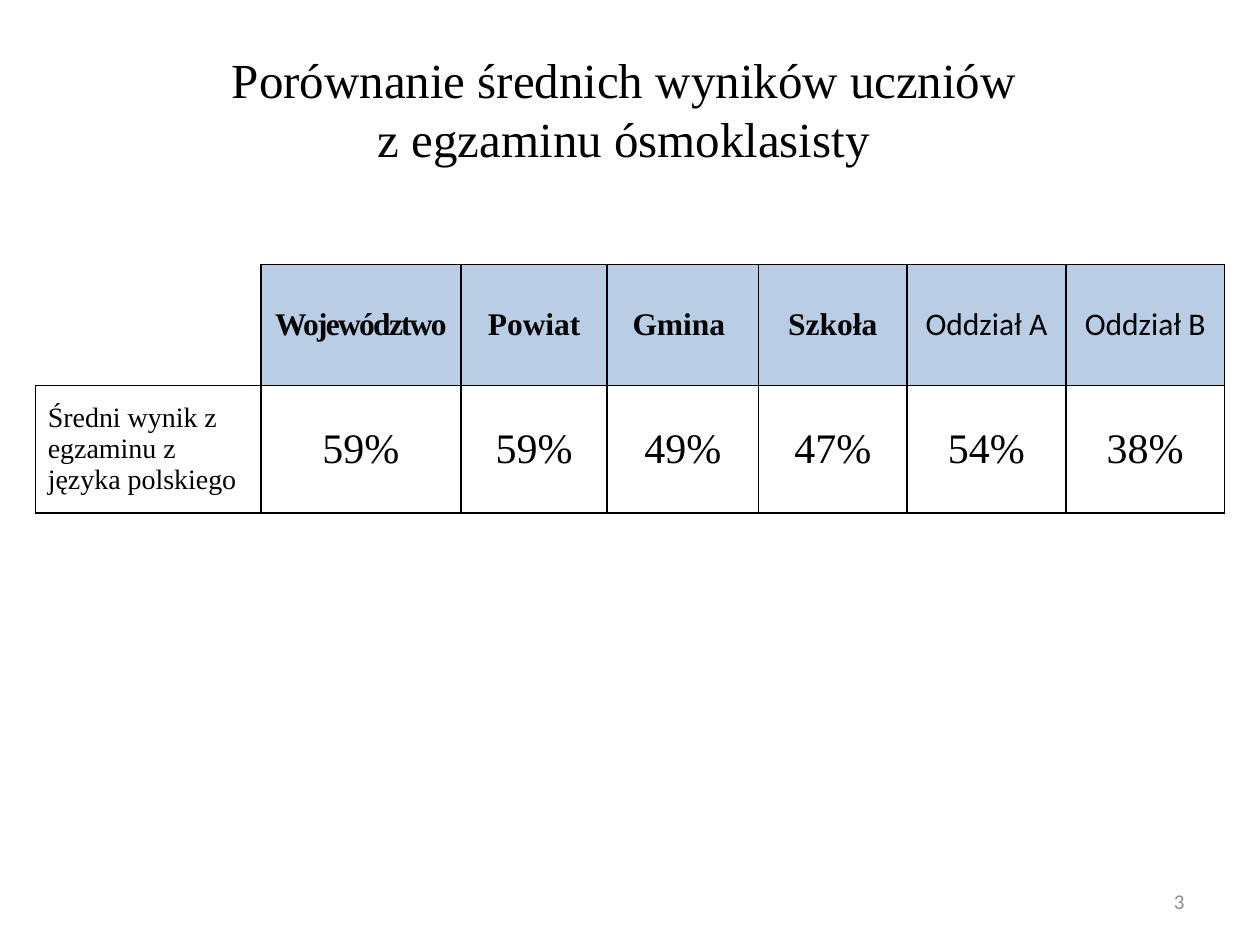
from lxml import etree
from pptx import Presentation
from pptx.dml.color import RGBColor
from pptx.enum import text
from pptx.oxml import ns
from pptx.util import Inches, Pt

TITLE = "Porównanie średnich wyników uczniów \nz egzaminu ósmoklasisty "
ROW_LABEL = "Średni wynik z egzaminu z języka polskiego"
RESULTS = [  # group, mean result, column width
    ("Województwo", "59%", 1.59),
    ("Powiat", "59%", 1.16),
    ("Gmina ", "49%", 1.2),
    ("Szkoła", "47%", 1.18),
    ("Oddział A", "54%", 1.26),
    ("Oddział B", "38%", 1.26),
]
LABEL_WIDTH = 1.79
ROW_HEIGHTS = (0.96, 1.01)
PAGE_NUMBER = "3"

SERIF, SANS = "Times New Roman", "Calibri"
BLACK = RGBColor(0x00, 0x00, 0x00)
HEADER_BLUE = RGBColor(0xB9, 0xCD, 0xE5)
GREY = RGBColor(0x8C, 0x8C, 0x8C)
CENTER, LEFT, RIGHT = text.PP_ALIGN.CENTER, text.PP_ALIGN.LEFT, text.PP_ALIGN.RIGHT


def format_text(text_frame, size, font=SERIF, color=BLACK, bold=False, align=CENTER):
    for paragraph in text_frame.paragraphs:
        paragraph.alignment = align
        for run in paragraph.runs:
            run.font.size = Pt(size)
            run.font.name = font
            run.font.bold = bold
            run.font.color.rgb = color


def add_borders(cell, sides):
    properties = cell._tc.get_or_add_tcPr()
    for side in sides:
        line = etree.SubElement(properties, ns.qn(f"a:ln{side}"), w=str(Pt(1)))
        fill = etree.SubElement(line, ns.qn("a:solidFill"))
        etree.SubElement(fill, ns.qn("a:srgbClr"), val=str(BLACK))


def fill_cell(cell, words, size, color=None, **style):
    add_borders(cell, "LRTB")
    cell.text_frame.text = words
    cell.vertical_anchor = text.MSO_ANCHOR.MIDDLE
    format_text(cell.text_frame, size, **style)
    if color is None:
        cell.fill.background()
    else:
        cell.fill.solid()
        cell.fill.fore_color.rgb = color


def add_title(slide):
    title = slide.shapes.title
    title.left, title.top = Inches(0), Inches(0)
    title.width, title.height = Inches(10), Inches(1.54)
    frame = title.text_frame
    frame.text = TITLE
    frame.auto_size = text.MSO_AUTO_SIZE.NONE
    frame.vertical_anchor = text.MSO_ANCHOR.TOP
    frame.margin_left = frame.margin_right = Inches(0.59)
    frame.margin_top, frame.margin_bottom = Inches(0.39), Inches(0.2)
    format_text(frame, 28)


def add_results_table(slide):
    widths = [LABEL_WIDTH] + [width for _, _, width in RESULTS]
    table = slide.shapes.add_table(
        len(ROW_HEIGHTS), len(widths), Inches(0.28), Inches(2.1),
        Inches(sum(widths)), Inches(sum(ROW_HEIGHTS))).table
    table.first_row = table.horz_banding = False
    for column, width in zip(table.columns, widths):
        column.width = Inches(width)
    for row, height in zip(table.rows, ROW_HEIGHTS):
        row.height = Inches(height)

    corner = table.cell(0, 0)
    add_borders(corner, "RB")
    corner.fill.background()
    fill_cell(table.cell(1, 0), ROW_LABEL, 16, align=LEFT)
    for index, (group, result, _) in enumerate(RESULTS, start=1):
        is_class = group.startswith("Oddział")
        fill_cell(table.cell(0, index), group, 18, HEADER_BLUE,
                  font=SANS if is_class else SERIF, bold=not is_class)
        fill_cell(table.cell(1, index), result, 24)

    # The longest heading is condensed by one point to fit its column
    heading = table.cell(0, 1).text_frame.paragraphs[0].runs[0]
    heading.font._element.set("spc", "-100")


def add_page_number(slide):
    box = slide.shapes.add_textbox(Inches(7.17), Inches(6.95), Inches(2.33), Inches(0.4))
    frame = box.text_frame
    frame.word_wrap = True
    frame.vertical_anchor = text.MSO_ANCHOR.MIDDLE
    frame.text = PAGE_NUMBER
    format_text(frame, 12, font=SANS, color=GREY, align=RIGHT)


def main():
    presentation = Presentation()
    presentation.slide_width, presentation.slide_height = Inches(10), Inches(7.5)
    slide = presentation.slides.add_slide(presentation.slide_layouts.get_by_name("Title Only"))
    add_title(slide)
    add_results_table(slide)
    add_page_number(slide)
    presentation.save("out.pptx")


if __name__ == "__main__":
    main()
